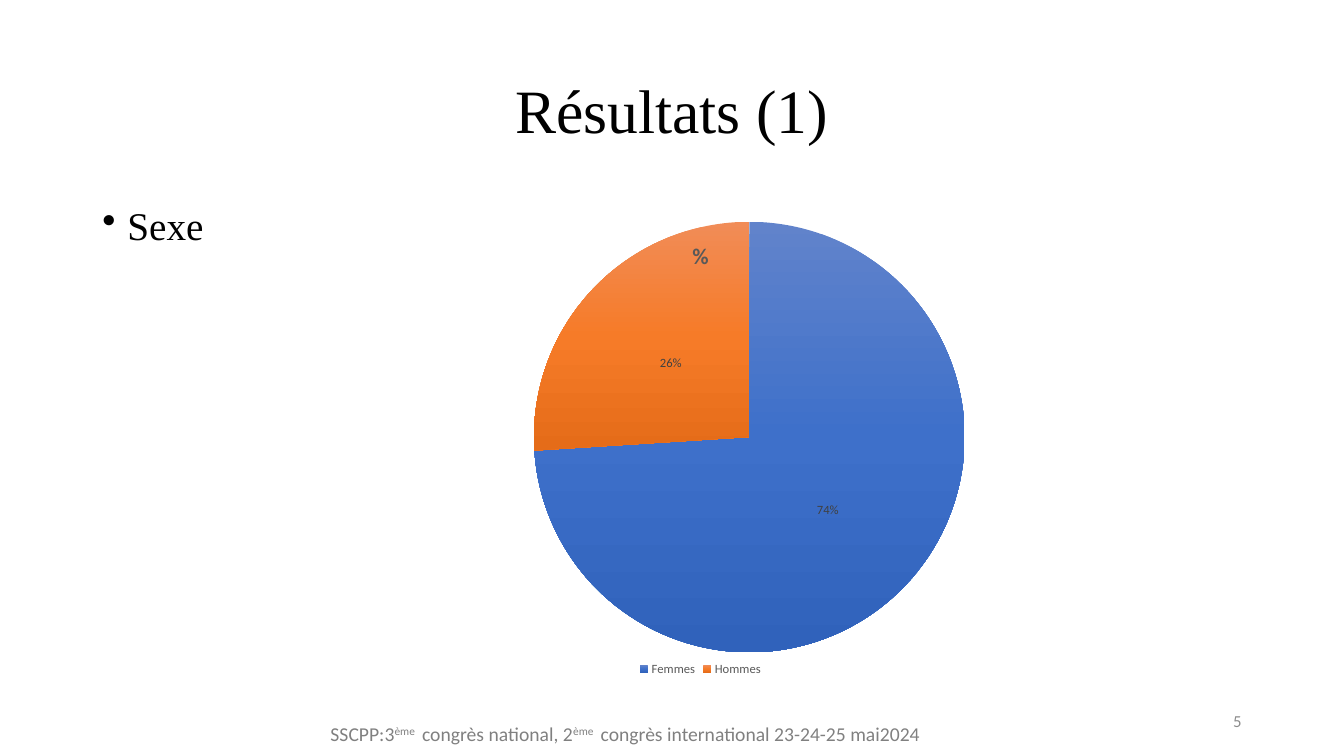
import copy
import pptx
import pptx.chart.data
import pptx.dml.color
import pptx.enum.chart
import pptx.enum.text
import pptx.oxml
import pptx.oxml.ns
import pptx.util

Pt = pptx.util.Pt
RGB = pptx.dml.color.RGBColor
Align = pptx.enum.text.PP_ALIGN
Anchor = pptx.enum.text.MSO_ANCHOR

# Content
TITLE = "Résultats (1)"
BULLET = "Sexe"
NUMBER = "5"
FOOTER = [  # text, raised
    ("SSCPP:3", False),
    ("ème ", True),
    (" congrès national, 2", False),
    ("ème ", True),
    (" congrès international 23-24-25 mai2024", False),
]
SERIES = "%"
SHARES = {"Femmes": 74, "Hommes": 26}

# Style
SERIF, SANS = "Times New Roman", "Calibri"
BLACK = RGB(0, 0, 0)
DARK = RGB(0x40, 0x40, 0x40)
SLATE = RGB(0x59, 0x59, 0x59)
GRAY = RGB(0x80, 0x80, 0x80)
PALE = RGB(0x8C, 0x8C, 0x8C)
BLUES = [RGB(0x61, 0x83, 0xCB), RGB(0x3E, 0x70, 0xCA), RGB(0x30, 0x62, 0xBB)]
ORANGES = [RGB(0xF1, 0x8C, 0x57), RGB(0xF6, 0x7B, 0x28), RGB(0xE5, 0x6C, 0x19)]
STOPS = [0, 0.5, 1]
PLOT = {"x": 0.29, "y": 0, "w": 0.522, "h": 0.939}

deck = pptx.Presentation()
deck.slide_width, deck.slide_height = Pt(960), Pt(540)
slide = deck.slides.add_slide(deck.slide_layouts[6])


def style(font, name, size, color, bold=False):
    font.name, font.size, font.bold = name, Pt(size), bold
    font.color.rgb = color


def add_text(box, runs, look, align=Align.LEFT, anchor=Anchor.TOP, bullet=False):
    frame = slide.shapes.add_textbox(*map(Pt, box)).text_frame
    frame.word_wrap = True
    frame.vertical_anchor = anchor
    para = frame.paragraphs[0]
    para.alignment = align
    if bullet:
        props = para._p.get_or_add_pPr()
        props.set("marL", str(Pt(18)))
        props.set("indent", str(Pt(-18)))
        mark = pptx.oxml.parse_xml(
            f'<a:buChar {pptx.oxml.ns.nsdecls("a")} char="•"/>')
        props.append(mark)
    for text, raised in runs:
        run = para.add_run()
        run.text = text
        if raised:
            run._r.get_or_add_rPr().set("baseline", "30000")
    style(para.font, *look)
    return para


# Title and bullet
head = add_text((66, 29, 828, 104.4), [(TITLE, False)], (SERIF, 44, BLACK),
                Align.CENTER, Anchor.MIDDLE)
body = add_text((66, 144, 828, 342.7), [(BULLET, False)], (SERIF, 28, BLACK),
                bullet=True)
head.line_spacing = body.line_spacing = 0.9

# Pie chart
data = pptx.chart.data.CategoryChartData()
data.categories = list(SHARES)
data.add_series(SERIES, list(SHARES.values()))
chart = slide.shapes.add_chart(
    pptx.enum.chart.XL_CHART_TYPE.PIE,
    Pt(158.4), Pt(158.4), Pt(684), Pt(327.6), data).chart
style(chart.font, SANS, 10, BLACK)

chart.has_title = True
chart.chart_title.include_in_layout = True
label = chart.chart_title.text_frame
label.text = SERIES
style(label.paragraphs[0].font, SANS, 16, SLATE, True)

chart.has_legend = True
chart.legend.position = pptx.enum.chart.XL_LEGEND_POSITION.BOTTOM
chart.legend.include_in_layout = False
style(chart.legend.font, SANS, 9, SLATE)

pie = chart.plots[0]
pie.vary_by_categories = True
for index, shades in enumerate([BLUES, ORANGES]):
    fill = pie.series[0].points[index].format.fill
    fill.gradient()
    fill.gradient_angle = 270
    stops = chart._chartSpace.xpath(".//a:gsLst")[index]
    stops.append(copy.deepcopy(stops[-1]))
    for stop, place, shade in zip(fill.gradient_stops, STOPS, shades):
        stop.position = place
        stop.color.rgb = shade

tags = pie.series[0].data_labels
tags.show_percentage, tags.show_value = True, False
tags.number_format, tags.number_format_is_linked = "0%", False
tags.position = pptx.enum.chart.XL_LABEL_POSITION.CENTER
style(tags.font, SANS, 9, DARK)

# Fixed plot area
area = chart._chartSpace.xpath(".//c:plotArea")[0]
for old in area.xpath("./c:layout"):
    area.remove(old)
modes = "".join(f'<c:{side}Mode val="edge"/>' for side in "xy")
sizes = "".join(f'<c:{key} val="{value}"/>' for key, value in PLOT.items())
area.insert(0, pptx.oxml.parse_xml(
    f'<c:layout {pptx.oxml.ns.nsdecls("c")}><c:manualLayout>'
    f'<c:layoutTarget val="inner"/>{modes}{sizes}</c:manualLayout></c:layout>'))

# Footer and page number
add_text((229, 512, 645.8, 24.5), FOOTER, (SANS, 14, GRAY))
add_text((678, 500.4, 216, 28.8), [(NUMBER, False)], (SANS, 12, PALE),
         Align.RIGHT, Anchor.MIDDLE)

deck.save("out.pptx")
